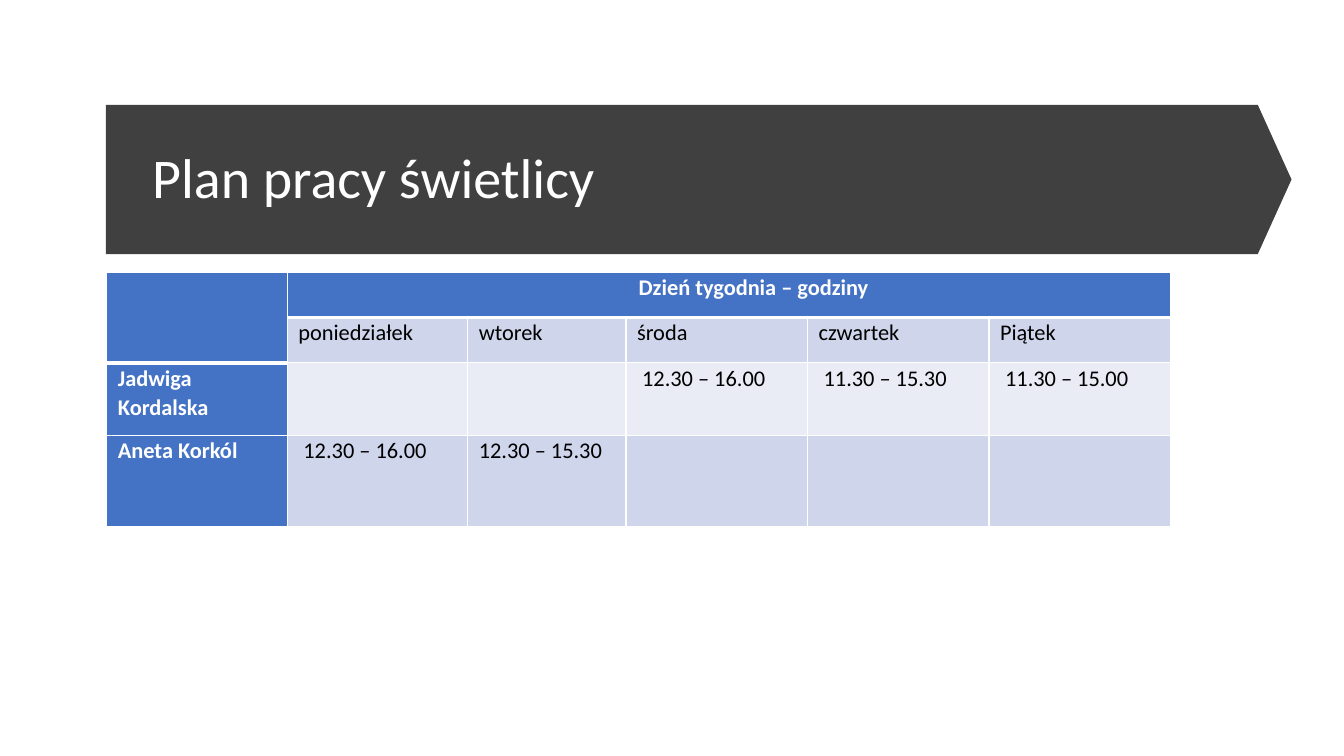
import dataclasses

import lxml.etree
import pptx
import pptx.dml.color
import pptx.enum.shapes
import pptx.enum.text
import pptx.oxml.ns
import pptx.slide
import pptx.table
import pptx.text.text
import pptx.util

SCALE = 9144  # EMU in one px, 100 px to the inch

WHITE = pptx.dml.color.RGBColor(0xFF, 0xFF, 0xFF)
BLACK = pptx.dml.color.RGBColor(0x00, 0x00, 0x00)
DARK = pptx.dml.color.RGBColor(0x40, 0x40, 0x40)
BLUE = pptx.dml.color.RGBColor(0x44, 0x72, 0xC4)
BAND = pptx.dml.color.RGBColor(0xCF, 0xD5, 0xEA)
PALE = pptx.dml.color.RGBColor(0xE9, 0xEB, 0xF5)

LEFT = pptx.enum.text.PP_ALIGN.LEFT
CENTER = pptx.enum.text.PP_ALIGN.CENTER
MIDDLE = pptx.enum.text.MSO_ANCHOR.MIDDLE
TOP = pptx.enum.text.MSO_ANCHOR.TOP


@dataclasses.dataclass(frozen=True)
class Box:
    left: int
    top: int
    width: int
    height: int


@dataclasses.dataclass(frozen=True)
class Row:
    height: int
    fill: pptx.dml.color.RGBColor
    texts: tuple[str, ...]


ARROW = Box(619, -410, 148, 1176)
TITLE = Box(141, 132, 1096, 94)
TABLE = Box(106, 270, 1055, 252)
WIDTHS = (179, 179, 157, 180, 180, 180)
INDENT = 49
ROWS = (
    Row(45, BLUE, ("", "Dzień tygodnia – godziny", "", "", "", "")),
    Row(45, BAND, ("", "poniedziałek", "wtorek", "środa", "czwartek", "Piątek")),
    Row(72, PALE, ("Jadwiga Kordalska", "", "",
                   " 12.30 – 16.00", " 11.30 – 15.30", " 11.30 – 15.00")),
    Row(90, BAND, ("Aneta Korkól", " 12.30 – 16.00", "12.30 – 15.30", "", "", "")),
)
CELL = {
    "margin_left": 11 * SCALE,
    "margin_right": 11 * SCALE,
    "margin_top": 0,
    "margin_bottom": 0,
    "vertical_anchor": TOP,
}


def apply(target: object, values: dict[str, object]) -> None:
    for name, value in values.items():
        setattr(target, name, value)


def place(box: Box) -> dict[str, int]:
    """Give the box as shape attributes in EMU."""
    return {name: px * SCALE for name, px in dataclasses.asdict(box).items()}


def write(frame: pptx.text.text.TextFrame, text: str, font: dict[str, object],
          para: dict[str, object]) -> None:
    line = frame.paragraphs[0]
    apply(line, para)
    run = line.add_run()
    run.text = text
    apply(run.font, {"name": "Calibri"} | font)
    run.font.color.rgb = WHITE if font["color_white"] else BLACK


def style(size: int, white: bool, bold: bool) -> dict[str, object]:
    return {"size": pptx.util.Pt(size), "bold": bold, "color_white": white}


def edge(cell: pptx.table._Cell, base: int) -> None:
    """Draw white borders, with the bottom one of the given points."""
    props = cell._tc.get_or_add_tcPr()
    for tag, points in {"lnL": 1, "lnR": 1, "lnT": 1, "lnB": base}.items():
        line = lxml.etree.SubElement(props, pptx.oxml.ns.qn(f"a:{tag}"),
                                     w=str(pptx.util.Pt(points)))
        fill = lxml.etree.SubElement(line, pptx.oxml.ns.qn("a:solidFill"))
        lxml.etree.SubElement(fill, pptx.oxml.ns.qn("a:srgbClr"), val=str(WHITE))


def add_arrow(slide: pptx.slide.Slide) -> None:
    kind = pptx.enum.shapes.MSO_SHAPE.DOWN_ARROW
    arrow = slide.shapes.add_shape(kind, *place(ARROW).values())
    arrow.rotation = 270
    arrow.adjustments[0] = 1
    arrow.adjustments[1] = 0.226
    arrow.shadow.inherit = False
    arrow.fill.solid()
    arrow.fill.fore_color.rgb = DARK
    arrow.line.fill.background()
    slide.shapes._spTree.insert(2, arrow._element)


def set_title(slide: pptx.slide.Slide) -> None:
    title = slide.shapes.title
    apply(title, place(TITLE))
    apply(title.text_frame, {"vertical_anchor": MIDDLE, "word_wrap": True})
    write(title.text_frame, "Plan pracy świetlicy", style(40, True, False),
          {"alignment": LEFT, "line_spacing": 0.9})


def add_plan(slide: pptx.slide.Slide) -> None:
    grid = slide.shapes.add_table(len(ROWS), len(WIDTHS),
                                  *place(TABLE).values()).table
    for column, width in zip(grid.columns, WIDTHS):
        column.width = width * SCALE
    for i, row in enumerate(ROWS):
        grid.rows[i].height = row.height * SCALE
        for j, text in enumerate(row.texts):
            cell = grid.cell(i, j)
            head = i == 0 or j == 0
            apply(cell, CELL)
            edge(cell, 3 if i == 0 or (i, j) == (1, 0) else 1)
            cell.fill.solid()
            cell.fill.fore_color.rgb = BLUE if head else row.fill
            if text:
                write(cell.text_frame, text, style(16, head, head),
                      {"alignment": CENTER if i == 0 else LEFT,
                       "line_spacing": 1.07, "space_after": pptx.util.Pt(8)})
    week = grid.cell(0, 1)
    week.text_frame.paragraphs[0]._p.get_or_add_pPr().set("marL", str(INDENT * SCALE))
    grid.cell(0, 0).merge(grid.cell(1, 0))
    week.merge(grid.cell(0, len(WIDTHS) - 1))


def main() -> None:
    deck = pptx.Presentation()
    apply(deck, {"slide_width": 1333 * SCALE, "slide_height": 750 * SCALE})
    slide = deck.slides.add_slide(deck.slide_layouts[5])
    add_arrow(slide)
    set_title(slide)
    add_plan(slide)
    deck.save("out.pptx")


if __name__ == "__main__":
    main()
